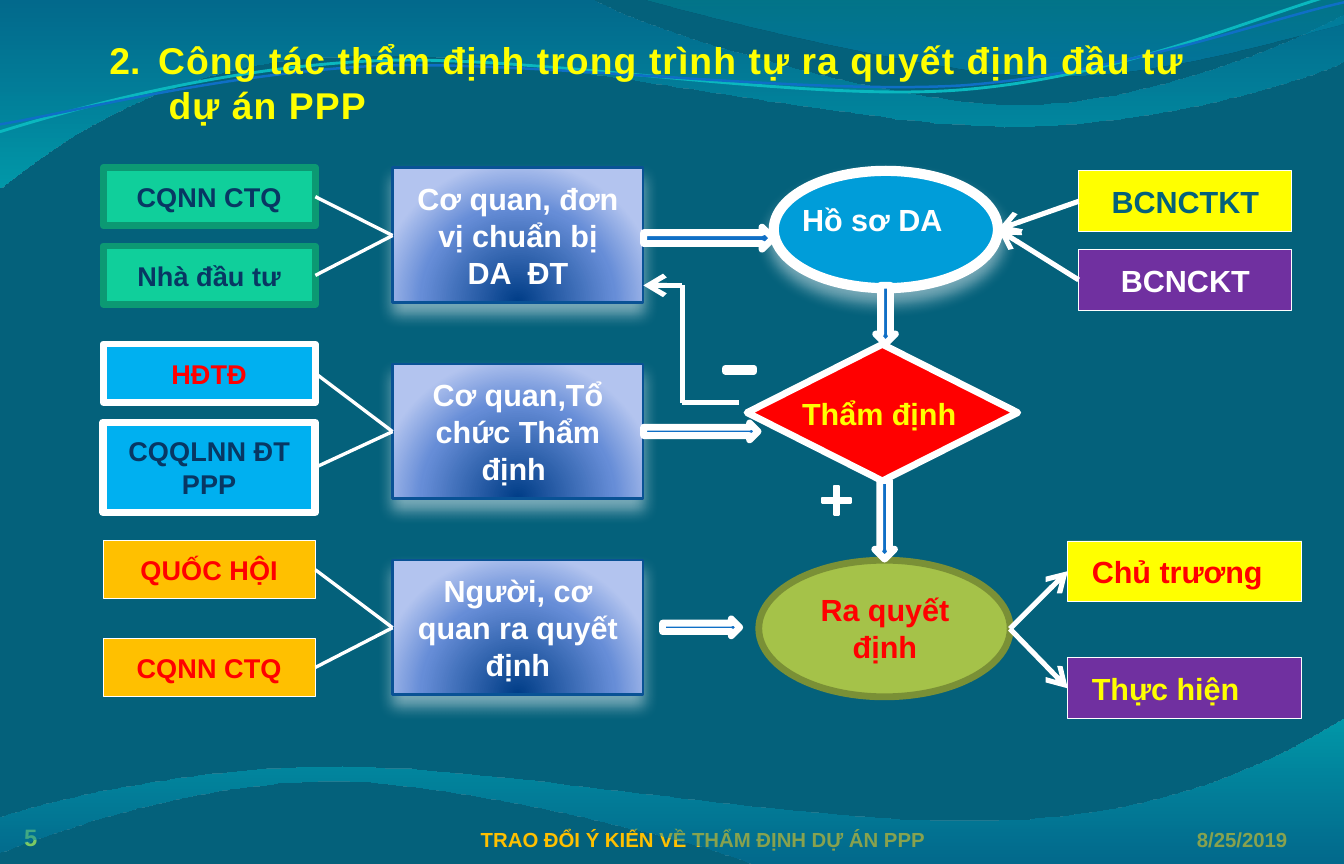
from lxml.etree import SubElement
from pptx import Presentation
from pptx.dml.color import RGBColor
from pptx.enum.shapes import MSO_CONNECTOR, MSO_SHAPE
from pptx.enum.text import MSO_ANCHOR, PP_ALIGN
from pptx.oxml.ns import qn
from pptx.util import Pt

COLORS = {
    "background": "04617B", "white": "FFFFFF", "yellow": "FFFF00", "red": "FF0000",
    "amber": "FFC000", "purple": "7030A0", "sky": "00B0F0", "cyan": "009DD9",
    "mint": "10CF9B", "mint edge": "0C9973", "olive": "A5C249", "olive edge": "7A9036",
    "navy": "083763", "blue": "0F6FC6", "blue edge": "095295", "leaf": "7CCA62",
    "aqua": "0AB8BF", "wave blue": "0074A1", "wave cyan": "00C6CF",
    "crest teal": "00A1A9", "crest blue": "008BBF",
    "deep": "003D87", "middle": "668DD7", "pale": "B3C4EF",
}
LEFT, CENTER = PP_ALIGN.LEFT, PP_ALIGN.CENTER
WIDTH, HEIGHT = 396.7, 254.9
THIN = 0.25


def write(shape, text, size, color, align=CENTER):
    """Add one bold paragraph to the shape, reusing its empty first one."""
    frame = shape.text_frame
    frame.word_wrap = True
    frame.vertical_anchor = MSO_ANCHOR.MIDDLE
    paragraph = frame.paragraphs[0] if not frame.text else frame.add_paragraph()
    paragraph.alignment = align
    run = paragraph.add_run()
    run.text = text
    run.font.name = "Arial"
    run.font.size = Pt(size)
    run.font.bold = True
    run.font.color.rgb = RGBColor.from_string(COLORS[color])
    return paragraph


def add_block(kind, left, top, width, height, fill, edge, weight):
    block = slide.shapes.add_shape(kind, Pt(left), Pt(top), Pt(width), Pt(height))
    block.shadow.inherit = False
    block.fill.solid()
    block.fill.fore_color.rgb = RGBColor.from_string(COLORS[fill])
    block.line.color.rgb = RGBColor.from_string(COLORS[edge])
    block.line.width = Pt(weight)
    return block


presentation = Presentation()
presentation.slide_width, presentation.slide_height = Pt(WIDTH), Pt(HEIGHT)
slide = presentation.slides.add_slide(presentation.slide_layouts[6])
slide.background.fill.solid()
slide.background.fill.fore_color.rgb = RGBColor.from_string(COLORS["background"])
gradients = []
shadowed = []

# Footer, lying under the bottom wave
for left, top, width, height, text, size, color, align in [
    (96.5, 240.5, 221.8, 14.4, "TRAO ĐỔI Ý KIẾN VỀ THẨM ĐỊNH DỰ ÁN PPP", 6, "amber", CENTER),
    (336.8, 240.5, 59.7, 14.4, "8/25/2019", 6, "amber", CENTER),
    (0, 239, 30.2, 15.8, "5", 7, "leaf", LEFT),
]:
    box = slide.shapes.add_textbox(Pt(left), Pt(top), Pt(width), Pt(height))
    write(box, text, size, color, align)

# Waves: two numbers are a corner, six are a Bezier curve
wave_stops = [(0, "wave blue", 45), (100, "wave cyan", 55)]
crest_stops = [(0, "crest teal", 30), (80, "crest blue", 45)]
waves = [
    (wave_stops, 90, None, 0, [
        (0, 0), (175, 0), (188.6, 8.6, 263.5, 31, 301, 31),
        (338.4, 31, 380.2, 13, WIDTH, 4.3), (WIDTH, 18),
        (390.2, 21.6, 344.9, 37.4, 295.9, 37.4), (247, 36.7, 151.2, 13.7, 102.2, 16.6),
        (51.1, 17.3, 18, 41, 0, 55.4)]),
    (crest_stops, 90, None, 0, [
        (190.1, 0), (202.3, 3.6, 270.7, 20.9, 305.3, 22.3),
        (339.8, 23.8, 381.6, 10.8, WIDTH, 7.2), (WIDTH, 0)]),
    (None, 0, "aqua", 0.85, [
        (0, 38.9), (18.7, 33.1, 62.6, 20.2, 110.2, 18),
        (157, 15.8, 234.7, 30.2, 283, 26.6), (330.5, 23, 372.2, 4.3, 396, -2.2)]),
    (None, 0, "blue", 0.75, [
        (0, 36.7), (18.7, 33.8, 64.8, 21.6, 112.3, 19.4),
        (159.8, 18, 236.9, 28.1, 284.4, 25.2), (331.2, 21.6, 373.7, 5.8, WIDTH, 0.7)]),
    (wave_stops, 270, None, 0, [
        (WIDTH, HEIGHT), (221.8, HEIGHT), (208.1, 248.4, 133.2, 230.4, 95.8, 230.4),
        (58.3, 230.4, 16.6, 244.8, 0, 251.3), (0, 241.2),
        (7.2, 238.3, 51.8, 226.1, 100.8, 226.1), (149.8, 226.1, 244.8, 244.1, 294.5, 241.9),
        (344.9, 241.2, 378, 223.2, WIDTH, 211.7)]),
]
for stops, angle, color, weight, segments in waves:
    corners = [(Pt(segment[-2]), Pt(segment[-1])) for segment in segments]
    builder = slide.shapes.build_freeform(*corners[0])
    builder.add_line_segments(corners[1:], close=stops is not None)
    wave = builder.convert_to_shape()
    wave.shadow.inherit = False
    sides = list(wave._element.iter(qn("a:lnTo")))
    for side, segment in zip(sides, segments[1:]):
        if len(segment) == 6:
            side.tag = qn("a:cubicBezTo")
            for index in range(2):
                x, y = segment[2 * index:2 * index + 2]
                control = SubElement(side, qn("a:pt"), x=str(Pt(x) - wave.left),
                                     y=str(Pt(y) - wave.top))
                side.insert(index, control)
    if stops:
        wave.line.fill.background()
        gradients.append((wave, stops, angle))
    else:
        wave.fill.background()
        wave.line.color.rgb = RGBColor.from_string(COLORS[color])
        wave.line.width = Pt(weight)

# Title
title = slide.shapes.add_textbox(Pt(12.2), Pt(7.3), Pt(372.2), Pt(33.8))
for text, margin, indent in [
    ("Công tác thẩm định trong trình tự ra quyết định đầu tư", 27.4, -14.4),
    ("dự án PPP", 30.5, 0),
]:
    paragraph = write(title, text, 11, "yellow", LEFT)
    paragraph.runs[0].font._element.set("spc", "30")
    properties = paragraph._p.get_or_add_pPr()
    properties.set("marL", str(Pt(margin)))
    properties.set("indent", str(Pt(indent)))
    if indent:
        SubElement(properties, qn("a:buFont"), typeface="Arial")
        SubElement(properties, qn("a:buAutoNum"), type="arabicPeriod", startAt="2")

# Process nodes
shadowed.append(add_block(MSO_SHAPE.OVAL, 228.4, 50.4, 66.2, 34.6, "cyan", "white", 3))
add_block(MSO_SHAPE.DIAMOND, 220.5, 101.6, 79.9, 40.3, "red", "white", 2)
add_block(MSO_SHAPE.OVAL, 224, 165.3, 74.2, 40.3, "olive", "olive edge", 2)
for left, top, height, text, color, align in [
    (229.7, 55.4, 18.7, "Hồ sơ DA", "white", LEFT),
    (229.7, 113, 18, "Thẩm định", "yellow", LEFT),
    (229.2, 170.8, 28.8, "Ra quyết định", "red", CENTER),
]:
    label = slide.shapes.add_textbox(Pt(left), Pt(top), Pt(64), Pt(height))
    write(label, text, 9, color, align)

# Responsible bodies, one per row
body_stops = [(0, "deep", 100), (68, "middle", 100), (100, "pale", 100)]
body_middles = []
for row, text in enumerate(["Cơ quan, đơn vị chuẩn bị DA  ĐT", "Cơ quan,Tổ chức Thẩm định ",
                            "Người, cơ quan ra quyết định"]):
    top = 49.5 + 57.85 * row
    body = add_block(MSO_SHAPE.RECTANGLE, 115.9, top, 73.9, 39.8, "deep", "blue edge", 0.75)
    write(body, text, 9, "white")
    gradients.append((body, body_stops, None))
    shadowed.append(body)
    body_middles.append(top + 20)

# Members on the left, two for each body
links = []
for index, (top, height, text, fill, edge, weight, color) in enumerate([
    (49.4, 17.3, "CQNN CTQ", "mint", "mint edge", 2, "navy"),
    (72.6, 17.3, "Nhà đầu tư", "mint", "mint edge", 2, "navy"),
    (101.5, 17.3, "HĐTĐ", "sky", "white", 2, "red"),
    (124.6, 26.6, "CQQLNN ĐT PPP", "sky", "white", 2.25, "navy"),
    (159.6, 17, "QUỐC HỘI", "amber", "white", THIN, "red"),
    (188.4, 17, "CQNN CTQ", "amber", "white", THIN, "red"),
]):
    member = add_block(MSO_SHAPE.RECTANGLE, 30.5, top, 62.6, height, fill, edge, weight)
    write(member, text, 8, color)
    links.append((93.1, top + height / 2, 115.9, body_middles[index // 2], 1, False))

# Block arrows and signs
for kind, left, top, width, height in [
    (MSO_SHAPE.DOWN_ARROW, 258.5, 84.2, 5.8, 17.3),
    (MSO_SHAPE.DOWN_ARROW, 258.2, 141.8, 5.8, 23.2),
    (MSO_SHAPE.RIGHT_ARROW, 190, 67, 38.2, 6.5),
    (MSO_SHAPE.RIGHT_ARROW, 190, 124.8, 33.8, 5),
    (MSO_SHAPE.RIGHT_ARROW, 195.6, 182.6, 22.8, 5),
    (MSO_SHAPE.MATH_MINUS, 212.6, 107.3, 11.5, 3.6),
]:
    add_block(kind, left, top, width, height, "blue", "white", 2)
plus = add_block(MSO_SHAPE.MATH_PLUS, 241.2, 141.9, 11.5, 11.5, "white", "white", 0.75)
plus.adjustments[0] = 0.122

# Documents and outcomes on the right
for left, top, width, text, fill, color, align in [
    (318.4, 50.4, 62.9, "BCNCTKT", "yellow", "background", CENTER),
    (318.4, 73.6, 62.9, "BCNCKT", "purple", "white", CENTER),
    (315.2, 159.6, 69.1, "Chủ trương", "yellow", "red", LEFT),
    (315.2, 194.1, 69.1, "Thực hiện", "purple", "yellow", LEFT),
]:
    block = add_block(MSO_SHAPE.RECTANGLE, left, top, width, 18, fill, "white", THIN)
    write(block, text, 9, color, align)

# Links: the return path from the decision, then the right-hand arrows
links += [
    (201.4, 84.2, 201.4, 118.8, 1.5, False),
    (201.4, 118.8, 218.2, 118.8, 1.5, False),
    (201.4, 84.2, 189.9, 84.2, 1.5, True),
    (318.4, 59.4, 294.6, 67.7, 1.5, True),
    (318.4, 82.6, 294.6, 67.7, 1.5, True),
    (298.1, 185.5, 315.2, 168.5, 1.5, True),
    (298.1, 185.5, 315.2, 203.1, 1.5, True),
]
for x1, y1, x2, y2, weight, arrow in links:
    link = slide.shapes.add_connector(MSO_CONNECTOR.STRAIGHT, Pt(x1), Pt(y1), Pt(x2), Pt(y2))
    link.line.color.rgb = RGBColor.from_string(COLORS["white"])
    link.line.width = Pt(weight)
    properties = link._element.spPr
    if arrow:
        SubElement(properties.find(qn("a:ln")), qn("a:tailEnd"), type="arrow")
    SubElement(properties, qn("a:effectLst"))

# Gradients: an angle makes a linear one, none a radial one
for shape, stops, angle in gradients:
    shape.fill.gradient()
    gradient = shape._element.spPr.find(qn("a:gradFill"))
    gradient.clear()
    stop_list = SubElement(gradient, qn("a:gsLst"))
    for position, color, opacity in stops:
        stop = SubElement(stop_list, qn("a:gs"), pos=str(position * 1000))
        tone = SubElement(stop, qn("a:srgbClr"), val=COLORS[color])
        SubElement(tone, qn("a:alpha"), val=str(opacity * 1000))
    if angle is None:
        radial = SubElement(gradient, qn("a:path"), {"path": "circle"})
        SubElement(radial, qn("a:fillToRect"), l="50000", t="130000", r="50000", b="-30000")
    else:
        SubElement(gradient, qn("a:lin"), ang=str(angle * 60000), scaled="0")

for shape in shadowed:
    effects = shape._element.spPr.find(qn("a:effectLst"))
    shadow = SubElement(effects, qn("a:outerShdw"), blurRad=str(Pt(4.5)), dist=str(Pt(3)),
                        dir="5400000", rotWithShape="0")
    tone = SubElement(shadow, qn("a:srgbClr"), val=COLORS["white"])
    SubElement(tone, qn("a:alpha"), val="48000")

presentation.save("out.pptx")
